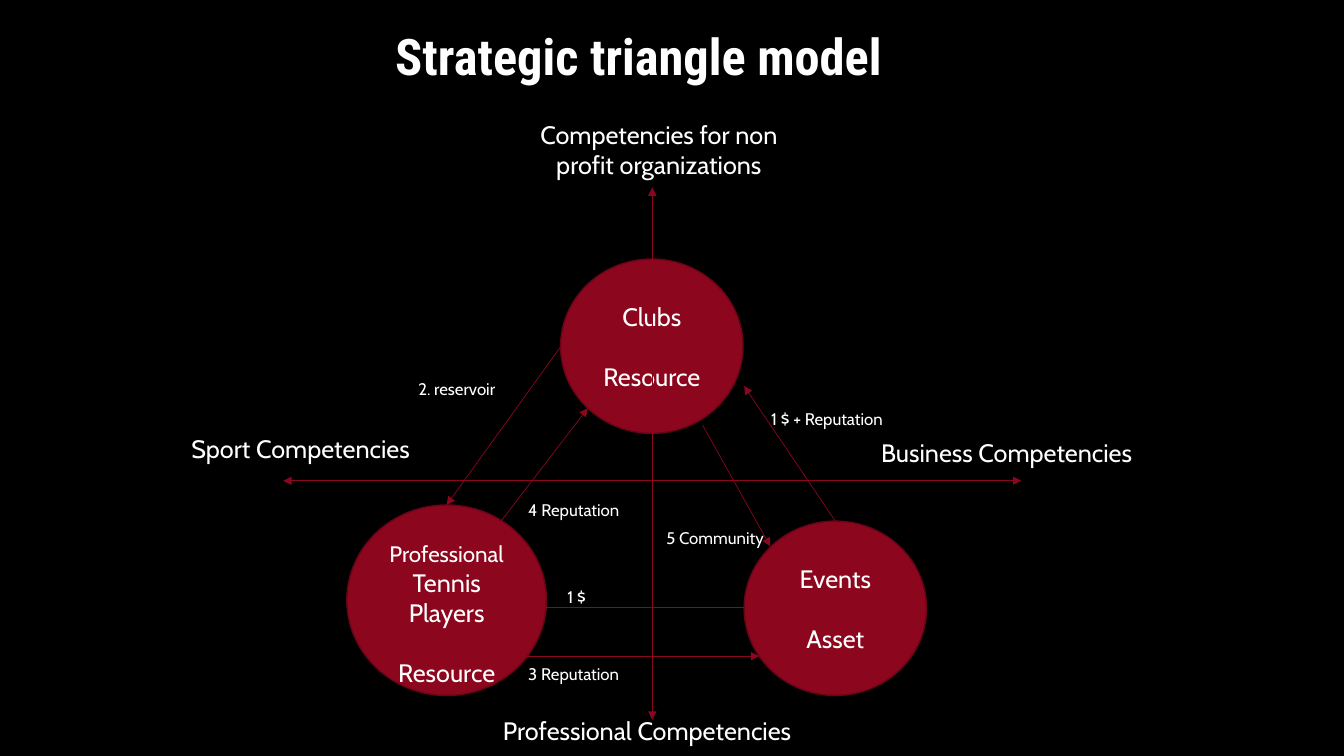
from pptx import Presentation
from pptx.dml.color import RGBColor
from pptx.enum.shapes import MSO_CONNECTOR, MSO_SHAPE
from pptx.enum.text import MSO_ANCHOR, PP_ALIGN
from pptx.oxml.ns import qn
from pptx.util import Inches, Pt
from lxml import etree

COLORS = {"back": "000000", "text": "FFFFFF", "red": "8C061E", "edge": "680416"}


def rgb(name):
    return RGBColor.from_string(COLORS[name])


def write(p, text, size, font="Cabin", bold=False):
    r = p.add_run()
    r.text = text
    style = {"name": font, "size": Pt(size), "bold": bold}
    for key, value in style.items():
        setattr(r.font, key, value)
    r.font.color.rgb = rgb("text")


prs = Presentation()
prs.slide_width, prs.slide_height = Inches(13.33), Inches(7.5)
s = prs.slides.add_slide(prs.slide_layouts[5])
s.background.fill.solid()
s.background.fill.fore_color.rgb = rgb("back")

title = s.shapes.title
place = {"left": 3.82, "top": -0.34, "width": 9, "height": 1.25}
for key, value in place.items():
    setattr(title, key, Inches(value))
tf = title.text_frame
tf.vertical_anchor = MSO_ANCHOR.BOTTOM
p = tf.paragraphs[0]
p.alignment, p.line_spacing = PP_ALIGN.LEFT, 0.9
write(p, "Strategic triangle model", 36, "Roboto Condensed", True)

# Circles: place, top inset, lines as (text, size); the last line stands apart
circles = {
    "clubs": ((5.56, 2.57, 1.81, 1.73), 0.05, [("Clubs", 18), ("Resource", 18)]),
    "players": ((3.44, 5.01, 1.98, 1.89), 0.32,
                [("Professional", 16), ("Tennis", 18), ("Players", 18), ("Resource", 18)]),
    "events": ((7.38, 5.17, 1.81, 1.73), 0.05, [("Events", 18), ("Asset", 18)]),
}
nodes = {}
for name, (box, inset, lines) in circles.items():
    sp = s.shapes.add_shape(MSO_SHAPE.OVAL, *map(Inches, box))
    sp.shadow.inherit = False
    sp.fill.solid()
    sp.fill.fore_color.rgb = rgb("red")
    sp.line.color.rgb = rgb("edge")
    sp.line.width = Pt(1)
    tf = sp.text_frame
    tf.word_wrap = True
    tf.vertical_anchor = MSO_ANCHOR.MIDDLE
    tf.margin_top = Inches(inset)
    for i, (text, size) in enumerate(lines):
        p = tf.paragraphs[0] if i == 0 else tf.add_paragraph()
        p.alignment = PP_ALIGN.CENTER
        write(p, text, size)
    p.space_before = Pt(21.5)
    nodes[name] = sp

# Arrows: start, end, heads, circle whose top they start from, circle whose top they reach
both, end = ("headEnd", "tailEnd"), ("tailEnd",)
arrows = [
    ((6.47, 1.86), (6.47, 7.14), both, None, None),
    ((2.81, 4.77), (10.13, 4.77), both, None, None),
    ((8.28, 5.17), (7.38, 3.83), end, "events", None),
    ((5.56, 3.44), (4.43, 5.01), end, None, "players"),
    ((7.38, 6.03), (5.31, 6.03), end, None, None),
    ((5.17, 6.51), (7.53, 6.51), end, None, None),
    ((4.97, 5.17), (5.83, 4.05), end, None, None),
    ((6.97, 4.22), (7.64, 5.42), end, None, None),
]
for start, stop, heads, source, target in arrows:
    line = s.shapes.add_connector(MSO_CONNECTOR.STRAIGHT, *map(Inches, start + stop))
    if source:
        line.begin_connect(nodes[source], 0)
    if target:
        line.end_connect(nodes[target], 0)
    line.line.color.rgb = rgb("red")
    line.line.width = Pt(0.5)
    ln = line.line._get_or_add_ln()
    for head in heads:
        etree.SubElement(ln, qn("a:" + head), type="triangle")
    etree.SubElement(line._element.spPr, qn("a:effectLst"))

labels = [
    ("Competencies for non profit organizations", 5, 1.13, 3.07, 0.71, 18),
    ("Sport Competencies", 1.8, 4.25, 2.52, 0.4, 18),
    ("Business Competencies", 8.64, 4.29, 3.09, 0.4, 18),
    ("Professional Competencies", 4.89, 7.05, 3.58, 0.4, 18),
    ("1 $ + Reputation", 7.55, 4.01, 1.55, 0.3, 12),
    ("2. reservoir", 4.05, 3.71, 1.52, 0.3, 12),
    ("1 $", 5.53, 5.77, 1.55, 0.3, 12),
    ("3 Reputation", 5.14, 6.54, 1.55, 0.3, 12),
    ("4 Reputation", 5.14, 4.91, 1.55, 0.3, 12),
    ("5 Community", 6.51, 5.19, 1.55, 0.3, 12),
]
for i, (text, *box, size) in enumerate(labels):
    tf = s.shapes.add_textbox(*map(Inches, box)).text_frame
    tf.word_wrap = True
    p = tf.paragraphs[0]
    p.alignment = PP_ALIGN.CENTER if i == 0 else PP_ALIGN.LEFT
    write(p, text, size)

prs.save("out.pptx")
